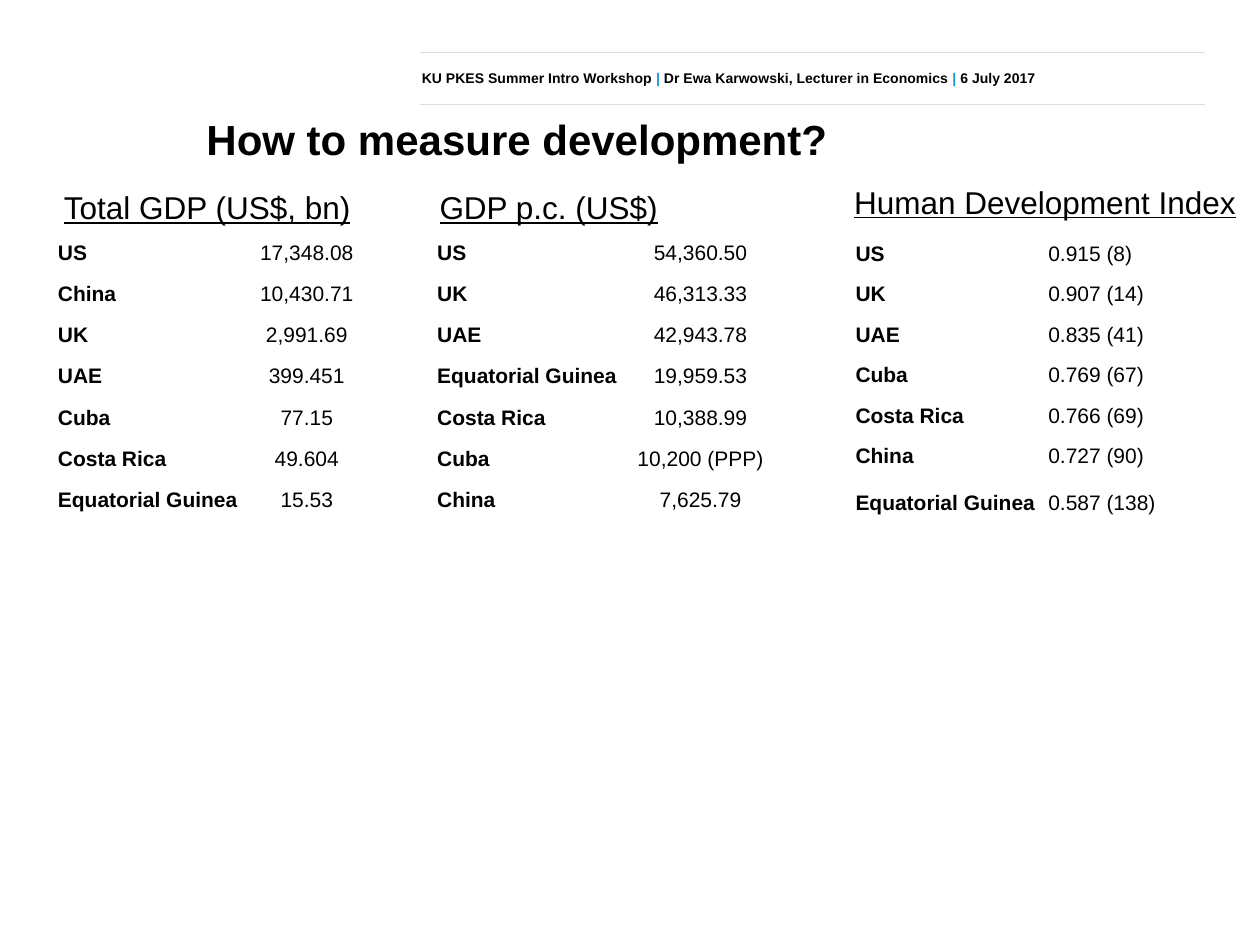
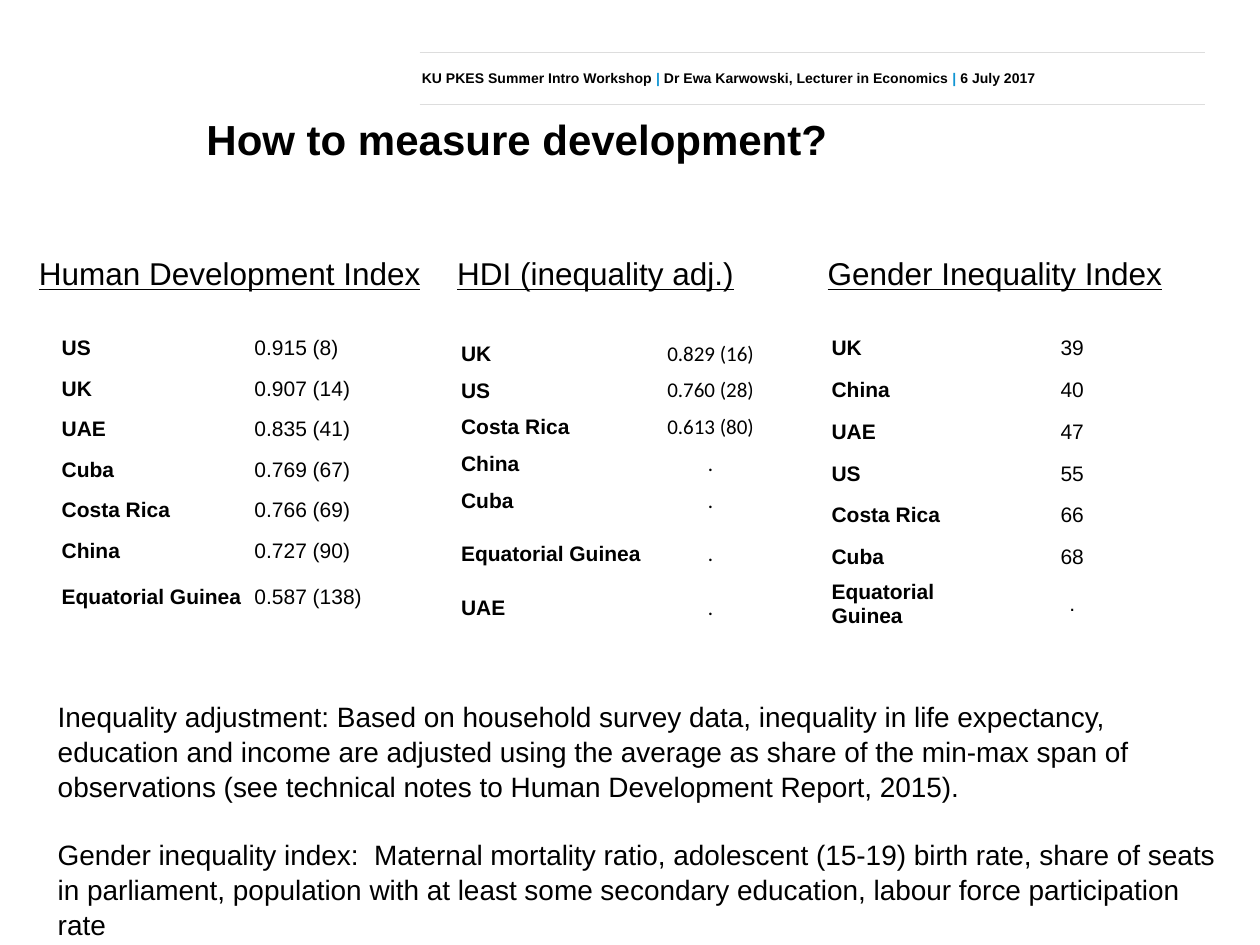
from dataclasses import dataclass, field

from lxml import etree
from pptx import Presentation
from pptx.dml.color import RGBColor
from pptx.enum.shapes import MSO_CONNECTOR
from pptx.enum.text import MSO_ANCHOR, PP_ALIGN
from pptx.oxml.ns import qn
from pptx.util import Inches, Pt

STRAIGHT = MSO_CONNECTOR.STRAIGHT
MIDDLE = MSO_ANCHOR.MIDDLE
LEFT, CENTER = PP_ALIGN.LEFT, PP_ALIGN.CENTER

BLACK = RGBColor(0x00, 0x00, 0x00)
RULE_GREY = RGBColor(0xDD, 0xDD, 0xDD)
DIVIDER_BLUE = RGBColor(0x11, 0x95, 0xD3)

HEADER_FORMAT = {"name": "Arial", "size": Pt(8), "bold": True}
TITLE_FORMAT = {"name": "Arial", "size": Pt(24), "bold": True}
HEADING_FORMAT = {"name": "Arial", "size": Pt(18), "underline": True}
NOTE_FORMAT = {"name": "Arial", "size": Pt(16)}
COUNTRY_FORMAT = {"name": "Arial", "size": Pt(12), "bold": True}

TITLE = "How to measure development?"
HEADER_PARTS = [
    "KU PKES Summer Intro Workshop ",
    "Dr Ewa Karwowski, Lecturer in Economics ",
    "6 July 2017",
]
NOTES = [
    "Inequality adjustment: Based on household survey data, inequality in life "
    "expectancy, education and income are adjusted using the average as share of "
    "the min-max span of observations (see technical notes to Human Development "
    "Report, 2015).",
    "Gender inequality index:  Maternal mortality ratio, adolescent (15-19) birth "
    "rate, share of seats in parliament, population with at least some secondary "
    "education, labour force participation rate",
]

TOTAL_GDP = [
    ("US", "17,348.08"), ("China", "10,430.71"), ("UK", "2,991.69"),
    ("UAE", "399.451"), ("Cuba", "77.15"), ("Costa Rica", "49.604"),
    ("Equatorial Guinea", "15.53"),
]
GDP_PER_CAPITA = [
    ("US", "54,360.50"), ("UK", "46,313.33"), ("UAE", "42,943.78"),
    ("Equatorial Guinea", "19,959.53"), ("Costa Rica", "10,388.99"),
    ("Cuba", "10,200 (PPP)"), ("China", "7,625.79"),
]
HDI = [
    ("US", "0.915 (8)"), ("UK", "0.907 (14)"), ("UAE", "0.835 (41)"),
    ("Cuba", "0.769 (67)"), ("Costa Rica", "0.766 (69)"), ("China", "0.727 (90)"),
    ("Equatorial Guinea", "0.587 (138)"),
]
ADJUSTED_HDI = [
    ("UK", "0.829 (16)"), ("US", "0.760 (28)"), ("Costa Rica", "0.613 (80)"),
    ("China", "."), ("Cuba", "."), ("Equatorial Guinea", "."), ("UAE", "."),
]
GENDER_INEQUALITY = [
    ("UK", "39"), ("China", "40"), ("UAE", "47"), ("US", "55"),
    ("Costa Rica", "66"), ("Cuba", "68"), ("Equatorial Guinea", "."),
]


@dataclass
class Ranking:
    """A heading above a country table; lengths are in inches."""
    heading: str
    heading_box: tuple[float, float, float]
    rows: list[tuple[str, str]]
    left: float
    top: float
    columns: tuple[float, float]
    height: float
    tall_rows: dict[int, float] = field(default_factory=dict)
    value_align: PP_ALIGN = CENTER
    value_font: str = "Arial"

    def row_heights(self) -> list[float]:
        """Rows not listed as tall share the remaining height equally."""
        shared = self.height - sum(self.tall_rows.values())
        usual = shared / (len(self.rows) - len(self.tall_rows))
        return [self.tall_rows.get(i, usual) for i in range(len(self.rows))]


def hdi_ranking(heading_box: tuple[float, float, float], left: float,
                top: float) -> Ranking:
    return Ranking("Human Development Index", heading_box, HDI, left, top,
                   (1.53, 1.0), 2.34, {6: 0.41}, LEFT)


GDP_SLIDE = [
    Ranking("Total GDP (US$, bn)", (0.41, 1.44, 2.53), TOTAL_GDP,
            0.45, 1.84, (1.52, 0.93), 2.29),
    Ranking("GDP p.c. (US$)", (3.39, 1.44, 2.53), GDP_PER_CAPITA,
            3.46, 1.84, (1.58, 1.04), 2.29),
    hdi_ranking((6.68, 1.4, 3.32), 6.78, 1.85),
]
INEQUALITY_SLIDE = [
    hdi_ranking((0.21, 1.97, 3.32), 0.48, 2.6),
    Ranking("Gender Inequality Index", (6.47, 1.97, 3.1), GENDER_INEQUALITY,
            6.59, 2.59, (1.44, 0.96), 2.33),
    Ranking("HDI (inequality adj.)", (3.53, 1.97, 3.32), ADJUSTED_HDI,
            3.65, 2.66, (1.49, 1.0), 2.31, {5: 0.56}, value_font="Calibri"),
]


def apply_format(font, values: dict, color: RGBColor = BLACK) -> None:
    for attribute, value in values.items():
        setattr(font, attribute, value)
    font.color.rgb = color


def add_run(paragraph, text: str, values: dict, color: RGBColor = BLACK) -> None:
    run = paragraph.add_run()
    run.text = text
    apply_format(run.font, values, color)


def add_text_frame(slide, left: float, top: float, width: float, height: float):
    box = slide.shapes.add_textbox(
        Inches(left), Inches(top), Inches(width), Inches(height))
    box.text_frame.word_wrap = True
    return box.text_frame


def add_rule(slide, y: float) -> None:
    rule = slide.shapes.add_connector(
        STRAIGHT, Inches(3.33), Inches(y), Inches(9.56), Inches(y))
    rule.line.color.rgb = RULE_GREY
    rule.line.width = Pt(0.5)
    etree.SubElement(rule._element.spPr, qn("a:effectLst"))


def add_header_and_title(slide) -> None:
    for y in (0.42, 0.83):
        add_rule(slide, y)
    header = add_text_frame(slide, 3.25, 0.5, 6.33, 0.23).paragraphs[0]
    for index, part in enumerate(HEADER_PARTS):
        if index:
            add_run(header, "| ", HEADER_FORMAT, DIVIDER_BLUE)
        add_run(header, part, HEADER_FORMAT)
    title = add_text_frame(slide, 1.54, 0.85, 7.81, 0.5)
    add_run(title.paragraphs[0], TITLE, TITLE_FORMAT)


def fill_cell(cell, text: str, values: dict, align: PP_ALIGN) -> None:
    cell.fill.background()
    cell.vertical_anchor = MIDDLE
    cell.margin_left = cell.margin_right = cell.margin_top = Inches(0.01)
    cell.margin_bottom = 0
    paragraph = cell.text_frame.paragraphs[0]
    paragraph.alignment = align
    add_run(paragraph, text, values)


def add_ranking(slide, ranking: Ranking) -> None:
    table = slide.shapes.add_table(
        len(ranking.rows), 2, Inches(ranking.left), Inches(ranking.top),
        Inches(sum(ranking.columns)), Inches(ranking.height)).table
    table.first_row = table.horz_banding = False
    for column, width in zip(table.columns, ranking.columns):
        column.width = Inches(width)
    for row, height in zip(table.rows, ranking.row_heights()):
        row.height = Inches(height)
    value_format = {**COUNTRY_FORMAT, "name": ranking.value_font, "bold": False}
    for index, (country, value) in enumerate(ranking.rows):
        fill_cell(table.cell(index, 0), country, COUNTRY_FORMAT, LEFT)
        fill_cell(table.cell(index, 1), value, value_format, ranking.value_align)
    heading = add_text_frame(slide, *ranking.heading_box, 0.4)
    add_run(heading.paragraphs[0], ranking.heading, HEADING_FORMAT)


def add_notes_text(slide) -> None:
    frame = add_text_frame(slide, 0.36, 5.49, 9.41, 1.99)
    for index, note in enumerate(NOTES):
        paragraph = frame.add_paragraph() if index else frame.paragraphs[0]
        paragraph.line_spacing = 1.04
        if index:
            paragraph.space_before = Pt(19)
        add_run(paragraph, note, NOTE_FORMAT)


def main() -> None:
    deck = Presentation()
    deck.slide_width, deck.slide_height = Inches(10), Inches(7.5)
    blank = deck.slide_layouts[6]
    for rankings in (GDP_SLIDE, INEQUALITY_SLIDE):
        slide = deck.slides.add_slide(blank)
        add_header_and_title(slide)
        for ranking in rankings:
            add_ranking(slide, ranking)
    add_notes_text(slide)
    deck.save("out.pptx")


if __name__ == "__main__":
    main()
